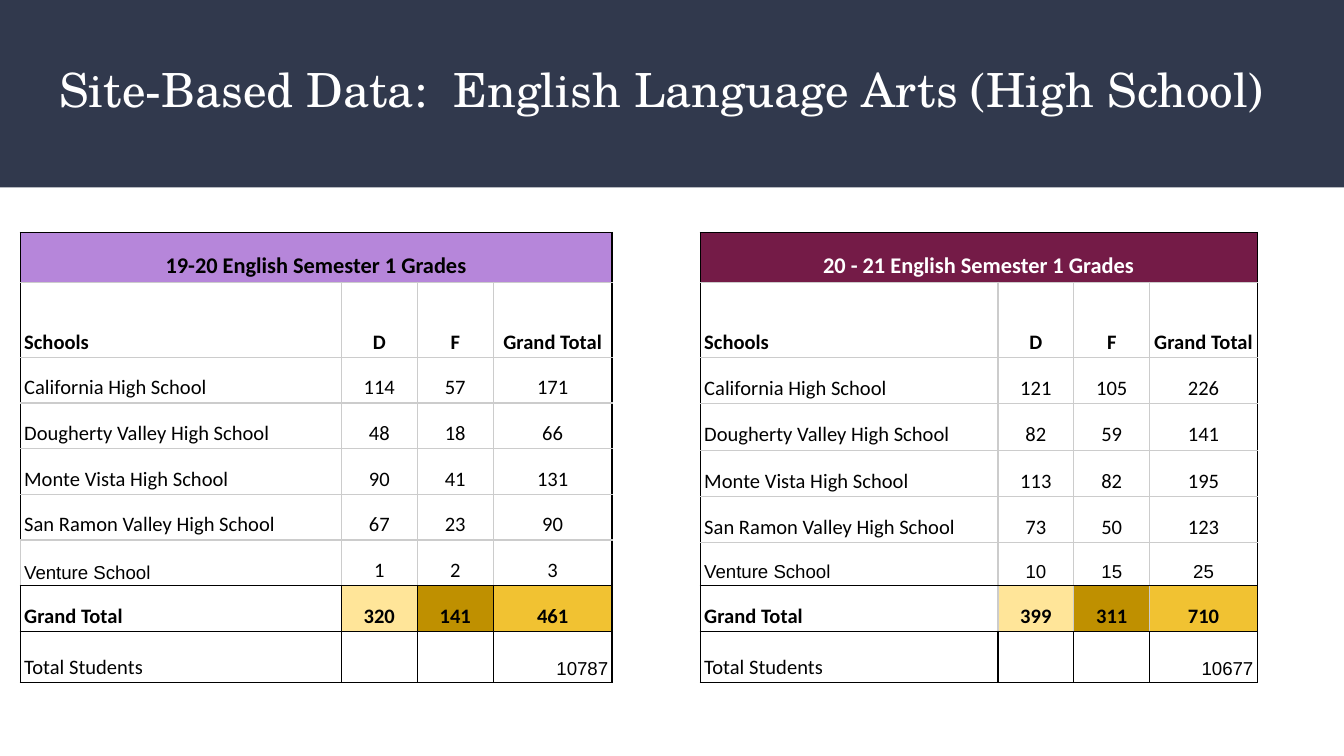
from lxml import etree
from pptx import Presentation
from pptx import util as u
from pptx.dml.color import RGBColor
from pptx.enum import shapes, text
from pptx.oxml.ns import qn

PX = 4572  # 200 px to the inch
COLORS = {
    "navy": "31394D", "white": "FFFFFF", "black": "000000", "grid": "CCCCCC",
    "lilac": "B686DA", "wine": "741B47",
    "pale": "FFE599", "ochre": "BF9000", "gold": "F1C232",
}
TOTAL_FILLS = [None, "pale", "ochre", "gold"]
SCHOOLS = ["California High School", "Dougherty Valley High School",
           "Monte Vista High School", "San Ramon Valley High School",
           "Venture School"]
VENTURE, TOTAL, STUDENTS = 6, 7, 8  # row numbers of the last three rows

TABLES = [
    {"title": "19-20 English Semester 1 Grades", "left": 30,
     "fill": "lilac", "ink": "black",
     "columns": [478, 113, 113, 177],
     "rows": [74, 112, 68, 68, 68, 68, 68, 68, 76],
     "grades": [(114, 57, 171), (48, 18, 66), (90, 41, 131), (67, 23, 90), (1, 2, 3)],
     "total": (320, 141, 461), "students": 10787,
     "venture_font": ("Calibri", 11), "total_grid": "black", "venture_left": "grid"},
    {"title": "20 - 21 English Semester 1 Grades", "left": 1042,
     "fill": "wine", "ink": "white",
     "columns": [443, 113, 113, 160],
     "rows": [74, 112, 69, 69, 69, 69, 63, 69, 76],
     "grades": [(121, 105, 226), (82, 59, 141), (113, 82, 195), (73, 50, 123), (10, 15, 25)],
     "total": (399, 311, 710), "students": 10677,
     "venture_font": ("Arial", 10), "total_grid": "grid", "venture_left": "black"},
]


def color(name):
    return RGBColor.from_string(COLORS[name])


def set_borders(cell, sides):
    """Draw the left, right, top and bottom lines of a cell, in that order."""
    properties = cell._tc.get_or_add_tcPr()
    for position, (tag, name) in enumerate(zip(("lnL", "lnR", "lnT", "lnB"), sides)):
        line = etree.Element(qn("a:" + tag), w=str(u.Pt(0.75)))
        fill = etree.SubElement(line, qn("a:solidFill"))
        etree.SubElement(fill, qn("a:srgbClr"), val=COLORS[name])
        properties.insert(position, line)


deck = Presentation()
deck.slide_width, deck.slide_height = 2000 * PX, 1125 * PX
page = deck.slides.add_slide(deck.slide_layouts[5])

# Header band, behind the title
title = page.shapes.title
band = page.shapes.add_shape(shapes.MSO_SHAPE.RECTANGLE, 0, 0, 2000 * PX, 279 * PX)
band.shadow.inherit = False
band.fill.solid()
band.fill.fore_color.rgb = color("navy")
band.line.fill.background()
title._element.addprevious(band._element)

# Title
title.left, title.top, title.width, title.height = [n * PX for n in (68, 70, 1864, 136)]
frame = title.text_frame
frame.text = "Site-Based Data:  English Language Arts (High School)"
frame.auto_size = text.MSO_AUTO_SIZE.NONE
frame.vertical_anchor = text.MSO_ANCHOR.TOP
frame.margin_left = frame.margin_right = frame.margin_top = frame.margin_bottom = 20 * PX
para = frame.paragraphs[0]
para.alignment = text.PP_ALIGN.LEFT
para.font.name, para.font.size = "TeX Gyre Schola", u.Pt(25.2)
para.font.color.rgb = color("white")

# Grade tables
for data in TABLES:
    content = [(data["title"], "", "", ""), ("Schools", "D", "F", "Grand Total")]
    content += [(school, *grades) for school, grades in zip(SCHOOLS, data["grades"])]
    content += [("Grand Total", *data["total"]),
                ("Total Students", "", "", data["students"])]

    holder = page.shapes.add_table(len(content), 4, data["left"] * PX, 346 * PX,
                                   sum(data["columns"]) * PX, sum(data["rows"]) * PX)
    table = holder.table
    table.first_row = table.horz_banding = False
    for column, width in zip(table.columns, data["columns"]):
        column.width = width * PX
    for row, height in zip(table.rows, data["rows"]):
        row.height = height * PX
    table.cell(0, 0).merge(table.cell(0, 3))

    for r, values in enumerate(content):
        for c, value in enumerate(values):
            cell = table.cell(r, c)
            cell.margin_left = cell.margin_right = 6 * PX
            cell.margin_top = cell.margin_bottom = 4 * PX
            cell.vertical_anchor = text.MSO_ANCHOR.BOTTOM

            # Fill
            fill_name = data["fill"] if r == 0 else TOTAL_FILLS[c] if r == TOTAL else None
            if fill_name:
                cell.fill.solid()
                cell.fill.fore_color.rgb = color(fill_name)
            else:
                cell.fill.background()

            # Borders: black frame and totals, grey grid
            inner = {0: "black", TOTAL: data["total_grid"], STUDENTS: "black"}.get(r, "grid")
            outer_left = data["venture_left"] if r == VENTURE else "black"
            set_borders(cell, (outer_left if c == 0 else inner,
                               "black" if c == 3 else inner,
                               "black" if r == 0 or r >= TOTAL else "grid",
                               "black" if r >= VENTURE else "grid"))

            # Text
            if value == "":
                continue
            cell.text = str(value)
            para = cell.text_frame.paragraphs[0]
            para.line_spacing = 1.15
            font, size = "Calibri", 12 if r == 0 else 11
            para.alignment = (text.PP_ALIGN.LEFT if c == 0 and r > 0
                              else text.PP_ALIGN.CENTER)
            if r == STUDENTS and c == 3:
                font, size = "Arial", 10
                para.alignment = text.PP_ALIGN.RIGHT
            elif r == VENTURE:
                font, size = ("Arial", 10) if c == 0 else data["venture_font"]
            para.font.name, para.font.size = font, u.Pt(size)
            para.font.bold = r in (0, 1, TOTAL)
            para.font.color.rgb = color(data["ink"] if r == 0 else "black")

deck.save("out.pptx")
